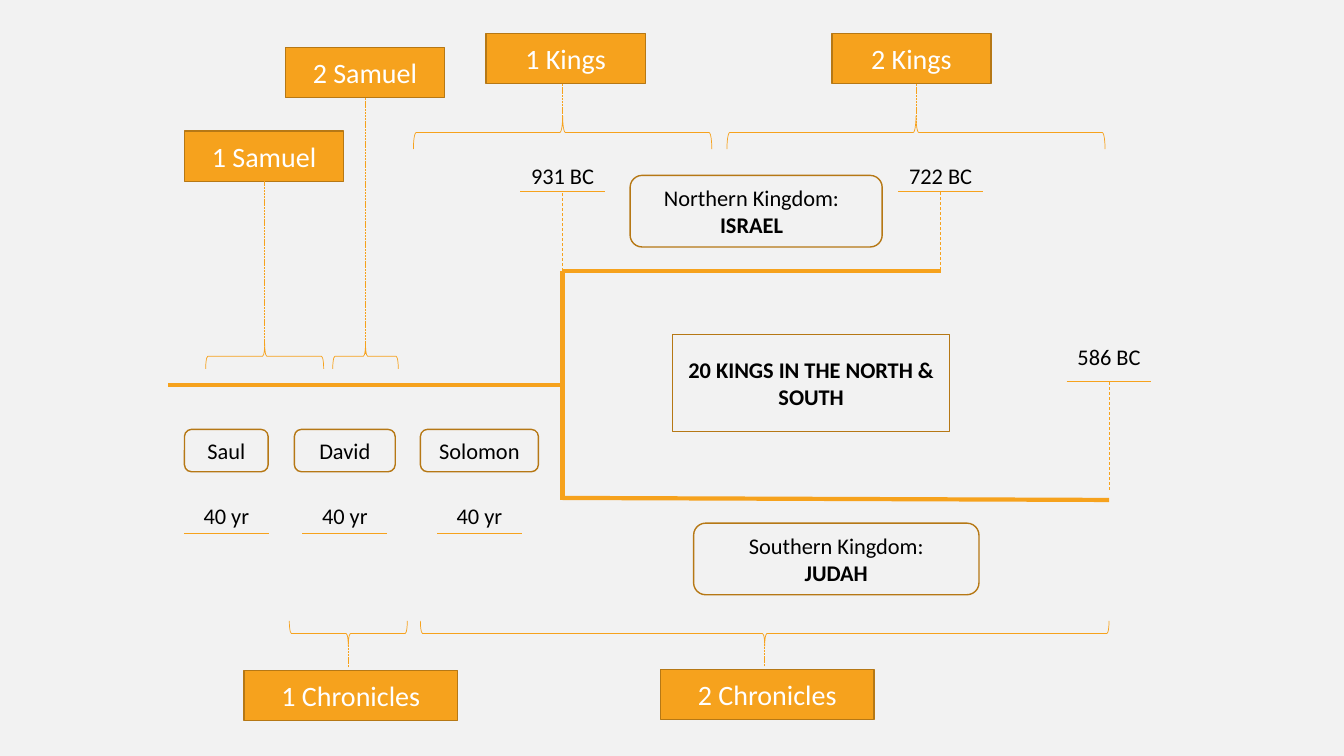
from dataclasses import dataclass

from lxml.etree import SubElement
from pptx import Presentation
from pptx.dml.color import RGBColor
from pptx.enum.dml import MSO_LINE as Dash
from pptx.enum.shapes import MSO_CONNECTOR, MSO_SHAPE as Preset
from pptx.enum.text import MSO_ANCHOR, MSO_AUTO_SIZE, PP_ALIGN
from pptx.oxml.ns import qn
from pptx.util import Emu, Pt

ORANGE = RGBColor(0xF6, 0xA2, 0x1D)
BROWN = RGBColor(0xB6, 0x78, 0x15)
BLACK = RGBColor(0x00, 0x00, 0x00)
WHITE = RGBColor(0xFF, 0xFF, 0xFF)
PAPER = RGBColor(0xF2, 0xF2, 0xF2)

EMU_PER_PX = 9144  # 100 px to the inch
BOOK_HEIGHT = 50
RULE_HALF = 42
THIN, THICK = 0.5, 3


@dataclass
class Book:
    """A book title with the brace over the years it covers."""
    name: str
    left: int
    top: int
    width: int
    brace_left: int
    brace_top: int
    brace_span: int
    brace_depth: int
    stem_end: int

    @property
    def is_above(self) -> bool:
        return self.top < self.brace_top


@dataclass
class Reign:
    king: str
    left: int
    width: int


@dataclass
class Date:
    label: str
    centre: int
    label_top: int
    rule_top: int
    stem_end: int


@dataclass
class Panel:
    lines: list[str]
    preset: Preset
    left: int
    top: int
    width: int
    height: int
    right_inset: int = 10


BOOKS = [
    Book("1 Samuel", 183, 130, 158, 204, 341, 117, 25, 348),
    Book("2 Samuel", 283, 47, 158, 330, 341, 65, 25, 352),
    Book("1 Kings", 482, 33, 158, 410, 115, 296, 33, 125),
    Book("2 Kings", 825, 33, 158, 721, 115, 375, 33, 125),
    Book("1 Chronicles", 242, 665, 212, 287, 616, 117, 25, 636),
    Book("2 Chronicles", 655, 664, 212, 417, 616, 683, 25, 635),
]
REIGNS = [Reign("Saul", 183, 83), Reign("David", 292, 100), Reign("Solomon", 417, 117)]
DATES = [
    Date("931 BC", 558, 156, 190, 269),
    Date("722 BC", 933, 156, 190, 268),
    Date("586 BC", 1100, 336, 378, 486),
]
PANELS = [
    Panel(["Northern Kingdom:", "ISRAEL"], Preset.ROUNDED_RECTANGLE, 625, 174, 250, 71, 19),
    Panel(["Southern Kingdom:", "JUDAH"], Preset.ROUNDED_RECTANGLE, 688, 519, 283, 71),
    Panel(["20 KINGS IN THE NORTH & SOUTH"], Preset.RECTANGLE, 667, 332, 275, 96),
]
# United kingdom, split, north, south
TIMELINE = [
    (167, 382, 558, 382),
    (558, 269, 558, 496),
    (558, 269, 933, 269),
    (558, 494, 1100, 496),
]


def px(length: float) -> Emu:
    return Emu(round(length * EMU_PER_PX))


def write(shape, lines: list[str], size: int, color: RGBColor, bold_last: bool = False) -> None:
    frame = shape.text_frame
    frame.word_wrap = True
    frame.text = "\n".join(lines)
    for para in frame.paragraphs:
        para.alignment = PP_ALIGN.CENTER
        for span in para.runs:
            span.font.name = "Calibri"
            span.font.size = Pt(size)
            span.font.color.rgb = color
    if bold_last:
        frame.paragraphs[-1].runs[0].font.bold = True


def add_line(page, x1: float, y1: float, x2: float, y2: float,
             weight: float = THIN, dash: Dash | None = None) -> None:
    line = page.shapes.add_connector(MSO_CONNECTOR.STRAIGHT, px(x1), px(y1), px(x2), px(y2))
    line.line.color.rgb = ORANGE
    line.line.width = Pt(weight)
    if dash is not None:
        line.line.dash_style = dash
    SubElement(line._element.spPr, qn("a:effectLst"))


def add_box(page, preset: Preset, left: float, top: float, width: float, height: float,
            fill: RGBColor | None = None, outline: RGBColor = BROWN, weight: float = 1):
    box = page.shapes.add_shape(preset, px(left), px(top), px(width), px(height))
    box.shadow.inherit = False
    if fill is None:
        box.fill.background()
    else:
        box.fill.solid()
        box.fill.fore_color.rgb = fill
    box.line.color.rgb = outline
    box.line.width = Pt(weight)
    box.text_frame.vertical_anchor = MSO_ANCHOR.MIDDLE
    return box


def add_ruled_label(page, text: str, centre: float, top: int, rule_top: int, half: int) -> None:
    label = page.shapes.add_textbox(px(centre - half), px(top), px(2 * half), px(37))
    write(label, [text], 16, BLACK)
    label.text_frame.auto_size = MSO_AUTO_SIZE.SHAPE_TO_FIT_TEXT
    add_line(page, centre - RULE_HALF, rule_top, centre + RULE_HALF, rule_top)


def add_book(page, book: Book) -> None:
    centre = book.brace_left + book.brace_span / 2
    middle = book.brace_top + book.brace_depth / 2
    # The brace is drawn upright, then turned about its centre
    brace = add_box(page, Preset.LEFT_BRACE, centre - book.brace_depth / 2,
                    middle - book.brace_span / 2, book.brace_depth, book.brace_span,
                    outline=ORANGE, weight=THIN)
    brace.rotation = 90 if book.is_above else 270
    title = add_box(page, Preset.RECTANGLE, book.left, book.top, book.width, BOOK_HEIGHT, ORANGE)
    write(title, [book.name], 20, WHITE)
    stem_start = book.top + BOOK_HEIGHT if book.is_above else book.top - 3
    add_line(page, centre, stem_start, centre, book.stem_end, dash=Dash.SQUARE_DOT)


def add_reign(page, reign: Reign) -> None:
    box = add_box(page, Preset.ROUNDED_RECTANGLE, reign.left, 426, reign.width, 42)
    write(box, [reign.king], 16, BLACK)
    add_ruled_label(page, "40 yr", reign.left + reign.width / 2, 493, 529, RULE_HALF)


def add_date(page, date: Date) -> None:
    add_line(page, date.centre, date.stem_end, date.centre, date.rule_top, dash=Dash.DASH)
    add_ruled_label(page, date.label, date.centre, date.label_top, date.rule_top, 50)


def add_panel(page, panel: Panel) -> None:
    box = add_box(page, panel.preset, panel.left, panel.top, panel.width, panel.height)
    box.text_frame.margin_right = px(panel.right_inset)
    write(box, panel.lines, 16, BLACK, bold_last=True)


def main() -> None:
    deck = Presentation()
    deck.slide_width, deck.slide_height = px(1333), px(750)
    page = deck.slides.add_slide(deck.slide_layouts[6])
    page.background.fill.solid()
    page.background.fill.fore_color.rgb = PAPER

    for ends in TIMELINE:
        add_line(page, *ends, weight=THICK)
    for reign in REIGNS:
        add_reign(page, reign)
    for date in DATES:
        add_date(page, date)
    for panel in PANELS:
        add_panel(page, panel)
    for book in BOOKS:
        add_book(page, book)

    deck.save("out.pptx")


if __name__ == "__main__":
    main()
